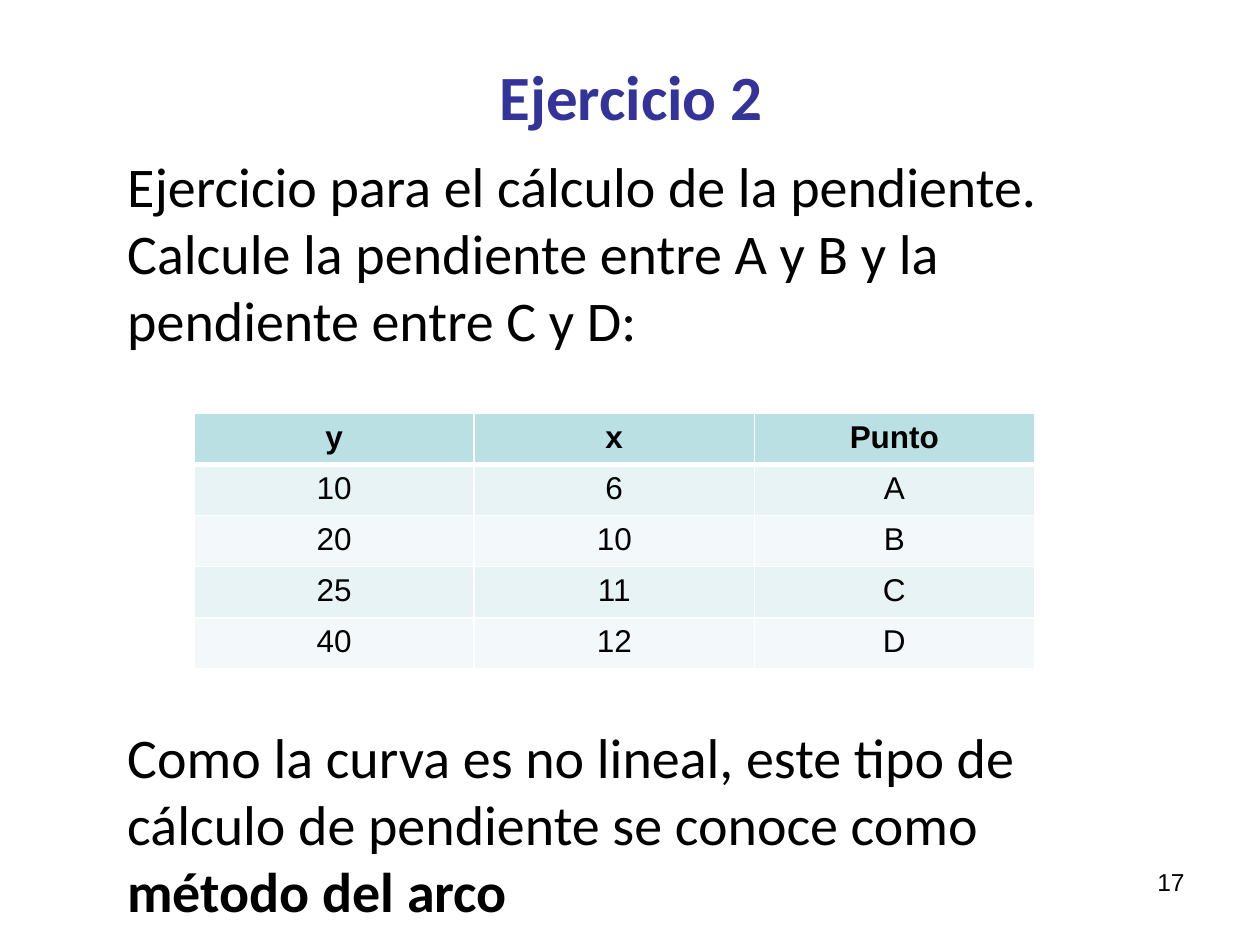
from pptx import Presentation
from pptx.dml.color import RGBColor
from pptx.enum.text import MSO_ANCHOR, MSO_AUTO_SIZE, PP_ALIGN
from pptx.oxml import parse_xml
from pptx.oxml.ns import nsdecls
from pptx.util import Inches, Pt

# Content
TITLE = "Ejercicio 2"
BODY = [  # space before in points, then (text, bold) runs
    (0, [("Ejercicio para el cálculo de la pendiente. Calcule la pendiente "
          "entre A y B y la pendiente entre C y D:", False)]),
    (211, [("Como la curva es no lineal, este tipo de cálculo de pendiente "
            "se conoce como ", False), ("método del arco", True)]),
]
POINTS = [
    ("y", "x", "Punto"),
    ("10", "6", "A"),
    ("20", "10", "B"),
    ("25", "11", "C"),
    ("40", "12", "D"),
]
PAGE = "17"
COLORS = {"title": "333399", "text": "000000", "header": "BBE0E3",
          "odd": "E7F3F4", "even": "F3F9FA", "border": "FFFFFF"}


def place(sp, left, top, width, height):
    sp.left, sp.top, sp.width, sp.height = map(Inches, (left, top, width, height))


def style(r, font, size, color="text", bold=False):
    r.font.name, r.font.size, r.font.bold = font, Pt(size), bold
    r.font.color.rgb = RGBColor.from_string(COLORS[color])


def add_borders(cell, bottom):
    tc_pr = cell._tc.get_or_add_tcPr()
    widths = {"lnL": 1, "lnR": 1, "lnT": 1, "lnB": bottom}
    for i, (side, width) in enumerate(widths.items()):
        tc_pr.insert(i, parse_xml(
            f'<a:{side} {nsdecls("a")} w="{Pt(width)}"><a:solidFill>'
            f'<a:srgbClr val="{COLORS["border"]}"/></a:solidFill></a:{side}>'))


prs = Presentation()
prs.slide_width, prs.slide_height = Inches(10), Inches(7.5)
s = prs.slides.add_slide(prs.slide_layouts[1])

# Title
title = s.shapes.title
place(title, 0.51, 0.13, 9, 1.25)
tf = title.text_frame
tf.text = TITLE
tf.auto_size, tf.vertical_anchor = MSO_AUTO_SIZE.NONE, MSO_ANCHOR.MIDDLE
tf.paragraphs[0].alignment = PP_ALIGN.CENTER
style(tf.paragraphs[0].runs[0], "Calibri", 36, "title", True)

# Body text, without bullets
body = s.placeholders[1]
place(body, 0.91, 1.15, 8.44, 6.35)
tf = body.text_frame
tf.auto_size, tf.vertical_anchor = MSO_AUTO_SIZE.NONE, MSO_ANCHOR.TOP
for i, (space, runs) in enumerate(BODY):
    p = tf.add_paragraph() if i else tf.paragraphs[0]
    p.space_before = Pt(space)
    p_pr = p._p.get_or_add_pPr()
    p_pr.set("marL", "0")
    p_pr.set("indent", "0")
    p_pr.append(parse_xml(f'<a:buNone {nsdecls("a")}/>'))
    for text, bold in runs:
        r = p.add_run()
        r.text = text
        style(r, "Calibri", 32, bold=bold)

# Table of points
table = s.shapes.add_table(len(POINTS), len(POINTS[0]), Inches(1.54), Inches(3.28),
                           Inches(6.67), Inches(2.03)).table
for i, row in enumerate(POINTS):
    fill = "header" if i == 0 else "odd" if i % 2 else "even"
    for j, text in enumerate(row):
        cell = table.cell(i, j)
        cell.text = text
        cell.fill.solid()
        cell.fill.fore_color.rgb = RGBColor.from_string(COLORS[fill])
        add_borders(cell, bottom=1 if i else 3)
        p = cell.text_frame.paragraphs[0]
        p.alignment = PP_ALIGN.CENTER
        style(p.runs[0], "Arial", 18, bold=i == 0)

# Page number
page = s.shapes.add_textbox(Inches(7.17), Inches(6.83), Inches(2.33), Inches(0.52))
page.text_frame.word_wrap = True
page.text_frame.text = PAGE
p = page.text_frame.paragraphs[0]
p.alignment = PP_ALIGN.RIGHT
style(p.runs[0], "Arial", 14)

prs.save("out.pptx")
